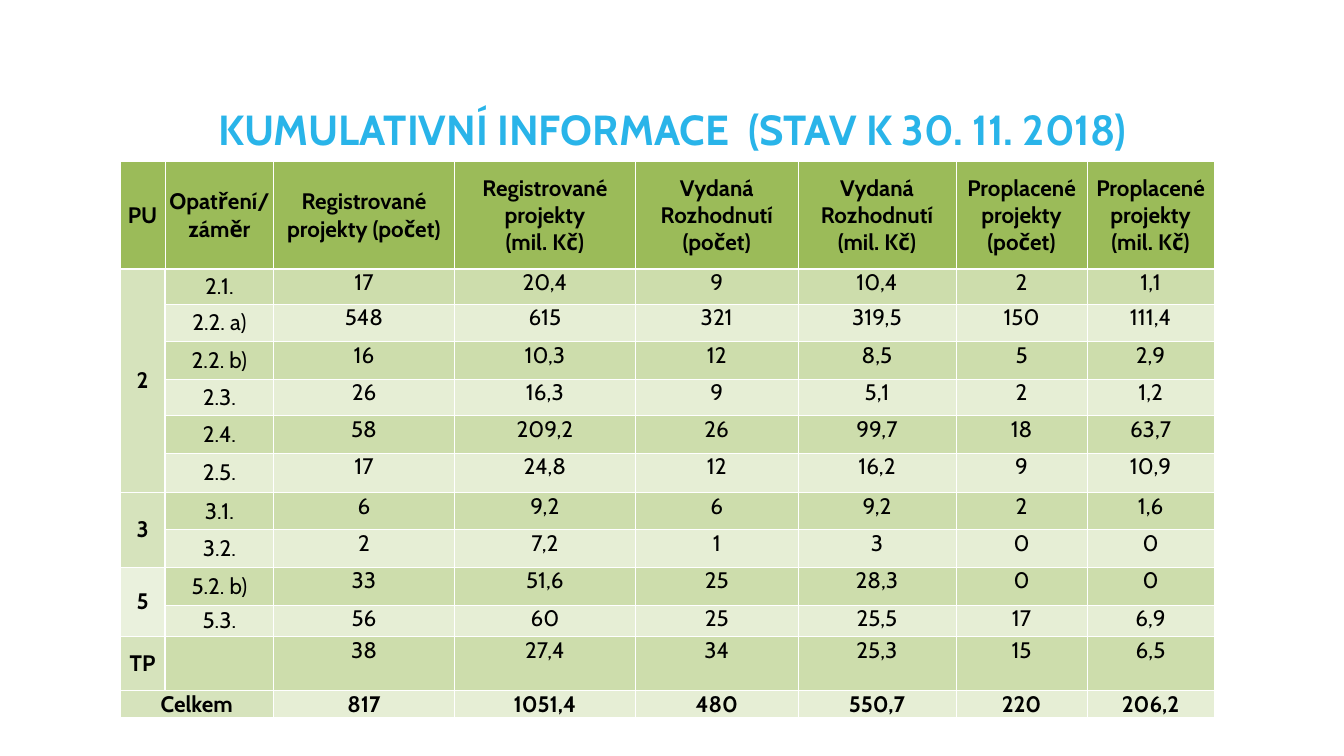
from pptx import Presentation, util as u
from pptx.dml import color
from pptx.enum import text
from pptx.oxml import parse_xml
from pptx.oxml import ns

FONT = "Cabin"
COLUMNS = [0.9, 2.15, 3.59, 3.59, 3.23, 3.13, 2.61, 2.51]
ROWS = [2.13, 0.69, 0.75, 0.74, 0.72, 0.75, 0.78, 0.74, 0.74, 0.75, 0.63, 1.07, 0.53]
HEADER = ["PU", "Opatření/záměr", "Registrované projekty (počet)",
          "Registrované projekty\n(mil. Kč)", "Vydaná Rozhodnutí (počet)",
          "Vydaná Rozhodnutí (mil. Kč)", "Proplacené projekty (počet)",
          "Proplacené projekty (mil. Kč)"]
GROUPS = [
    ("2", "D6E3BC", [
        ["2.1.", "17", "20,4", "9", "10,4", "2", "1,1"],
        ["2.2. a)", "548", "615", "321", "319,5", "150", "111,4"],
        ["2.2. b)", "16", "10,3", "12", "8,5", "5", "2,9"],
        ["2.3.", "26", "16,3", "9", "5,1", "2", "1,2"],
        ["2.4.", "58", "209,2", "26", "99,7", "18", "63,7"],
        ["2.5.", "17", "24,8", "12", "16,2", "9", "10,9"]]),
    ("3", "D6E3BC", [
        ["3.1.", "6", "9,2", "6", "9,2", "2", "1,6"],
        ["3.2.", "2", "7,2", "1", "3", "0", "0"]]),
    ("5", "EAF1DD", [
        ["5.2. b)", "33", "51,6", "25", "28,3", "0", "0"],
        ["5.3.", "56", "60", "25", "25,5", "17", "6,9"]]),
    ("TP", "D6E3BC", [["", "38", "27,4", "34", "25,3", "15", "6,5"]]),
    ("Celkem", "D6E3BC", [["", "817", "1051,4", "480", "550,7", "220", "206,2"]]),
]


def rgb(value):
    return color.RGBColor.from_string(value)


def add_text(paragraph, content, size, shade, bold):
    paragraph.alignment = text.PP_ALIGN.CENTER
    run = paragraph.add_run()
    run.text = content
    run.font.name = FONT
    run.font.size = u.Pt(size)
    run.font.bold = bold
    run.font.color.rgb = rgb(shade)


def add_title(slide, box):
    frame = slide.shapes.add_textbox(*box).text_frame
    frame.word_wrap = True
    frame.vertical_anchor = text.MSO_ANCHOR.TOP
    frame.margin_left = frame.margin_right = frame.margin_top = frame.margin_bottom = 0
    paragraph = frame.paragraphs[0]
    paragraph.line_spacing = 0.9
    add_text(paragraph, "KUMULATIVNÍ INFORMACE  (STAV K 30. 11. 2018)", 60, "29B4E9", True)


def set_borders(cell, widths):
    properties = cell._tc.get_or_add_tcPr()
    for side, width in zip("LRTB", widths):
        properties.append(parse_xml(
            f'<a:ln{side} {ns.nsdecls("a")} w="{u.Pt(width)}"><a:solidFill>'
            f'<a:srgbClr val="FFFFFF"/></a:solidFill></a:ln{side}>'))


def style_cell(cell, row, column):
    last = len(ROWS) - 1
    divider = 2 if row == last else 1
    set_borders(cell, [
        3 if row and column == divider else 1,
        3 if row and column == divider - 1 else 1,
        3 if row == 1 else 1,
        3 if row == 0 else 1])
    cell.margin_left = cell.margin_right = u.Inches(0.06)
    cell.margin_top = cell.margin_bottom = 0
    middle = row == 0 or column < 2
    cell.vertical_anchor = text.MSO_ANCHOR.MIDDLE if middle else text.MSO_ANCHOR.TOP


def fill_cell(cell, content, fill, bold):
    cell.fill.solid()
    cell.fill.fore_color.rgb = rgb(fill)
    frame = cell.text_frame
    for index, line in enumerate(content.split("\n") if content else []):
        paragraph = frame.add_paragraph() if index else frame.paragraphs[0]
        add_text(paragraph, line, 32, "000000", bold)


def add_summary_table(slide, box):
    left, top, width, height = box
    table = slide.shapes.add_table(len(ROWS), len(COLUMNS), *box).table
    for column, share in zip(table.columns, COLUMNS):
        column.width = round(width * share / sum(COLUMNS))
    for row, share in zip(table.rows, ROWS):
        row.height = round(height * share / sum(ROWS))
    for row in range(len(ROWS)):
        for column in range(len(COLUMNS)):
            style_cell(table.cell(row, column), row, column)
    for column, label in enumerate(HEADER):
        fill_cell(table.cell(0, column), label, "9BBB59", True)
    first = 1
    for name, fill, records in GROUPS:
        total = name == "Celkem"
        fill_cell(table.cell(first, 0), name, fill, True)
        for row, record in enumerate(records, first):
            for column, value in enumerate(record, 1):
                band = "CDDDAC" if row % 2 else "E6EED5"
                fill_cell(table.cell(row, column), value, band, total)
        end = first + len(records)
        if total:
            table.cell(first, 0).merge(table.cell(first, 1))
        elif len(records) > 1:
            table.cell(first, 0).merge(table.cell(end - 1, 0))
        first = end


def main():
    presentation = Presentation()
    presentation.slide_width = u.Inches(26.67)
    presentation.slide_height = u.Inches(15)
    slide = presentation.slides.add_slide(presentation.slide_layouts[6])

    def area(left, top, width, height):
        across, down = presentation.slide_width / 100, presentation.slide_height / 100
        return [round(left * across), round(top * down), round(width * across), round(height * down)]

    add_title(slide, area(5.14, 14.4, 89.76, 8.93))
    add_summary_table(slide, area(8.92, 21.4, 81.4, 73.5))
    presentation.save("out.pptx")


if __name__ == "__main__":
    main()
